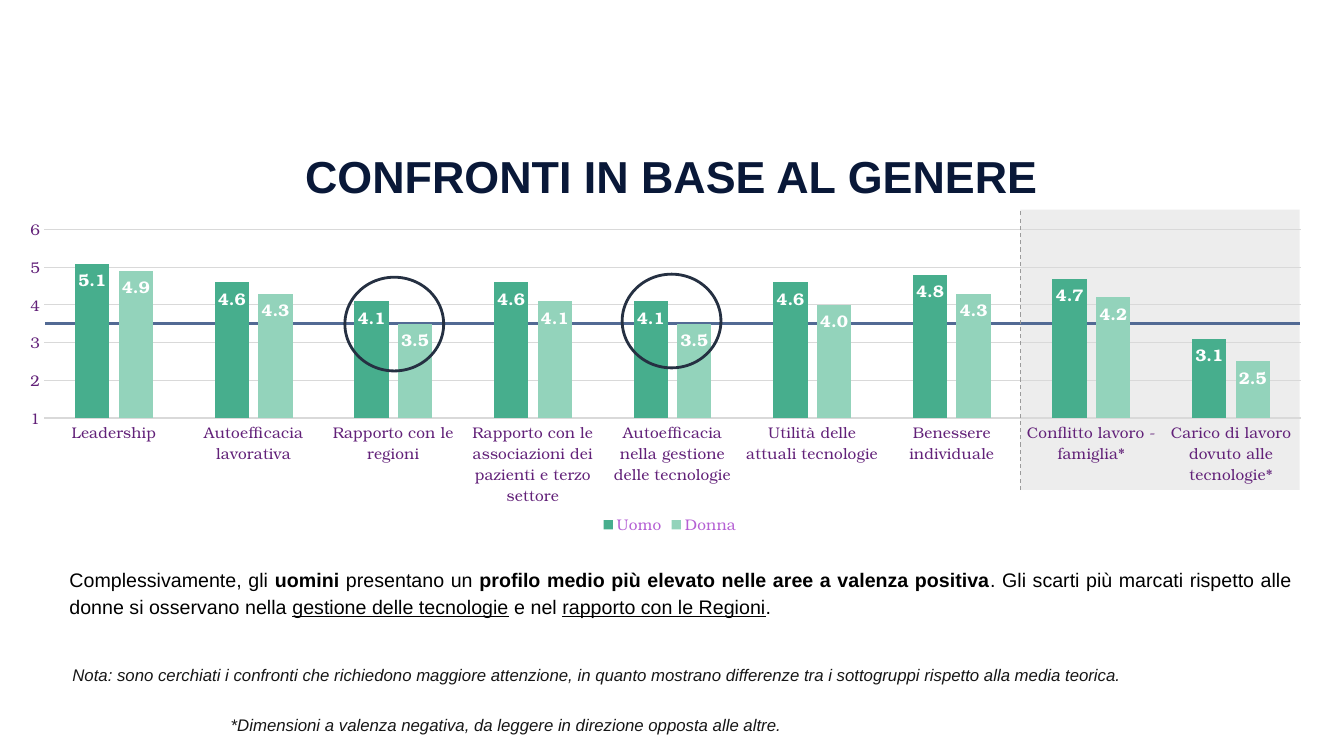
from dataclasses import dataclass

from lxml.etree import SubElement
from pptx import Presentation
from pptx.chart.data import CategoryChartData
from pptx.dml.color import RGBColor
from pptx.enum.chart import XL_CHART_TYPE, XL_LABEL_POSITION, XL_LEGEND_POSITION, XL_TICK_MARK
from pptx.enum.dml import MSO_LINE
from pptx.enum.shapes import MSO_CONNECTOR, MSO_SHAPE
from pptx.enum.text import MSO_ANCHOR, MSO_AUTO_SIZE, PP_ALIGN
from pptx.oxml.ns import qn
from pptx.util import Inches, Pt

WIDTH, HEIGHT = Inches(13.33), Inches(7.5)


@dataclass(frozen=True)
class Theme:
    """Colours, fonts and type sizes of the slide."""
    title: str = "091838"
    body: str = "000000"
    note: str = "161616"
    men: str = "47AE8D"
    women: str = "93D3BB"
    label: str = "FFFFFF"
    axis: str = "622179"
    legend: str = "B560D4"
    grid: str = "D9D9D9"
    mean: str = "526A94"
    divider: str = "9B9B9B"
    circle: str = "253042"
    text_font: str = "Arial"
    chart_font: str = "TeX Gyre Bonum"
    title_size: int = 32
    body_size: int = 14
    note_size: int = 12
    label_size: int = 12
    axis_size: int = 11
    chart_size: int = 10


THEME = Theme()

CATEGORIES = (
    "Leadership",
    "Autoefficacia lavorativa",
    "Rapporto con le regioni",
    "Rapporto con le associazioni dei pazienti e terzo settore",
    "Autoefficacia nella gestione delle tecnologie",
    "Utilità delle attuali tecnologie",
    "Benessere individuale",
    "Conflitto lavoro - famiglia*",
    "Carico di lavoro dovuto alle tecnologie*",
)
SERIES = (
    ("Uomo", THEME.men, (5.1, 4.6, 4.1, 4.6, 4.1, 4.6, 4.8, 4.7, 3.1)),
    ("Donna", THEME.women, (4.9, 4.3, 3.5, 4.1, 3.5, 4.0, 4.3, 4.2, 2.5)),
)
SUMMARY = (
    ("Complessivamente, gli ", ""),
    ("uomini", "bold"),
    (" presentano un ", ""),
    ("profilo medio più elevato nelle aree a valenza positiva", "bold"),
    (". Gli scarti più marcati rispetto alle donne si osservano nella ", ""),
    ("gestione delle tecnologie", "underline"),
    (" e nel ", ""),
    ("rapporto con le Regioni", "underline"),
    (".", ""),
)
NOTES = (
    ((4.65, 87.33, 92.8, 4), "Nota: sono cerchiati i confronti che richiedono maggiore attenzione, "
     "in quanto mostrano differenze tra i sottogruppi rispetto alla media teorica."),
    ((16.43, 93.87, 50.04, 4), "*Dimensioni a valenza negativa, da leggere in direzione opposta alle altre."),
)


def place(*shares):
    """Turn alternating width and height percentages into slide lengths."""
    return [round(share * (HEIGHT if index % 2 else WIDTH) / 100) for index, share in enumerate(shares)]


def set_font(font, name, size, color, bold=None, italic=None):
    """Set the typeface, size, colour and style of a font."""
    font.name, font.size = name, Pt(size)
    font.bold, font.italic = bold, italic
    font.color.rgb = RGBColor.from_string(color)


def set_line(line, color, width):
    """Give a line its colour and width in points."""
    line.color.rgb = RGBColor.from_string(color)
    line.width = Pt(width)


def add_text(slide, box, runs, size, color, bold=None, italic=None, inset=None):
    """Add a wrapped text box of one paragraph and return its frame and paragraph."""
    frame = slide.shapes.add_textbox(*place(*box)).text_frame
    frame.word_wrap = True
    if inset is not None:
        frame.margin_left = frame.margin_right = frame.margin_top = frame.margin_bottom = Inches(inset)
    paragraph = frame.paragraphs[0]
    for text, style in runs:
        run = paragraph.add_run()
        run.text = text
        if style:
            setattr(run.font, style, True)
    set_font(paragraph.font, THEME.text_font, size, color, bold, italic)
    return frame, paragraph


def add_title(slide):
    """Add the centred heading."""
    frame, paragraph = add_text(slide, (12.38, 18.53, 75.17, 10.4), [("CONFRONTI IN BASE AL GENERE", "")],
                                THEME.title_size, THEME.title, bold=True, inset=0.1)
    frame.vertical_anchor = MSO_ANCHOR.MIDDLE
    paragraph.alignment = PP_ALIGN.CENTER
    paragraph.line_spacing = 0.85


def add_summary(slide):
    """Add the justified comment under the chart."""
    paragraph = add_text(slide, (3.15, 73.33, 93.7, 10.67), SUMMARY,
                         THEME.body_size, THEME.body, inset=0.1)[1]
    paragraph.alignment = PP_ALIGN.JUSTIFY
    paragraph.line_spacing = 1.15
    paragraph._p.get_or_add_pPr().set("marL", str(Inches(0.17)))


def add_note(slide, box, text):
    """Add an italic footnote."""
    frame = add_text(slide, box, [(text, "")], THEME.note_size, THEME.note, italic=True)[0]
    frame.auto_size = MSO_AUTO_SIZE.SHAPE_TO_FIT_TEXT


def add_band(slide, box, opacity):
    """Add a translucent band behind the negative dimensions."""
    band = slide.shapes.add_shape(MSO_SHAPE.RECTANGLE, *place(*box))
    band.shadow.inherit = False
    band.line.fill.background()
    band.fill.solid()
    band.fill.fore_color.rgb = RGBColor.from_string(THEME.grid)
    color = band._element.spPr.find(f".//{qn('a:srgbClr')}")
    SubElement(color, qn("a:alpha")).set("val", str(opacity * 1000))


def add_circle(slide, left, top):
    """Circle a comparison that needs attention."""
    circle = slide.shapes.add_shape(MSO_SHAPE.OVAL, *place(left, top, 7.35, 12.4))
    circle.shadow.inherit = False
    circle.fill.background()
    set_line(circle.line, THEME.circle, 2)


def add_rule(slide, ends, color, width, dash=None):
    """Add a straight line between two points."""
    rule = slide.shapes.add_connector(MSO_CONNECTOR.STRAIGHT, *place(*ends))
    set_line(rule.line, color, width)
    if dash:
        rule.line.dash_style = dash
    SubElement(rule._element.spPr, qn("a:effectLst"))


def set_plot_layout(chart, x, y, w, h):
    """Fix the inner plot area as shares of the chart."""
    plot_area = chart._chartSpace.chart.plotArea
    layout = plot_area.find(qn("c:layout"))
    if layout is None:
        layout = SubElement(plot_area, qn("c:layout"))
        plot_area.insert(0, layout)
    manual = SubElement(layout, qn("c:manualLayout"))
    settings = dict(layoutTarget="inner", xMode="edge", yMode="edge", x=x, y=y, w=w, h=h)
    for tag, value in settings.items():
        SubElement(manual, qn(f"c:{tag}")).set("val", str(value))


def style_axes(chart):
    """Style the category axis, the value axis and its gridlines."""
    for axis in (chart.category_axis, chart.value_axis):
        axis.major_tick_mark = axis.minor_tick_mark = XL_TICK_MARK.NONE
        set_font(axis.tick_labels.font, THEME.chart_font, THEME.axis_size, THEME.axis)
    set_line(chart.category_axis.format.line, THEME.grid, 0.75)
    values = chart.value_axis
    values.minimum_scale, values.maximum_scale, values.major_unit = 1, 6, 1
    values.format.line.fill.background()
    set_line(values.major_gridlines.format.line, THEME.grid, 0.75)


def style_series(series, color):
    """Colour a series and label its columns."""
    series.format.fill.solid()
    series.format.fill.fore_color.rgb = RGBColor.from_string(color)
    labels = series.data_labels
    labels.show_value = True
    labels.position = XL_LABEL_POSITION.INSIDE_END
    labels.number_format, labels.number_format_is_linked = "#,##0.0", False
    set_font(labels.font, THEME.chart_font, THEME.label_size, THEME.label, bold=True)


def add_gender_chart(slide, box):
    """Add the clustered columns comparing men and women."""
    data = CategoryChartData()
    data.categories = CATEGORIES
    for name, _, values in SERIES:
        data.add_series(name, values)
    chart = slide.shapes.add_chart(XL_CHART_TYPE.COLUMN_CLUSTERED, *place(*box), data).chart
    set_font(chart.font, THEME.chart_font, THEME.chart_size, THEME.legend)
    chart.has_title = False
    chart.has_legend = True
    chart.legend.position = XL_LEGEND_POSITION.BOTTOM
    chart.legend.include_in_layout = False
    set_font(chart.legend.font, THEME.chart_font, THEME.axis_size, THEME.legend)
    plot = chart.plots[0]
    plot.gap_width, plot.overlap, plot.vary_by_categories = 180, -27, False
    for series, (_, color, _) in zip(plot.series, SERIES):
        style_series(series, color)
    style_axes(chart)
    set_plot_layout(chart, 0.02, 0.052, 0.964, 0.577)


def main():
    """Build the slide and save it."""
    presentation = Presentation()
    presentation.slide_width, presentation.slide_height = WIDTH, HEIGHT
    slide = presentation.slides.add_slide(presentation.slide_layouts[6])
    add_title(slide)
    add_band(slide, (75.92, 27.73, 20.78, 37.07), opacity=45)
    add_rule(slide, (3.38, 42.8, 96.7, 42.8), THEME.mean, 1.75)
    add_gender_chart(slide, (1.35, 28.13, 97, 43.2))
    add_rule(slide, (75.92, 64.8, 75.92, 27.73), THEME.divider, 0.75, MSO_LINE.DASH)
    for left, top in ((25.66, 36.67), (46.29, 36.27)):
        add_circle(slide, left, top)
    add_summary(slide)
    for box, text in NOTES:
        add_note(slide, box, text)
    presentation.save("out.pptx")


if __name__ == "__main__":
    main()
